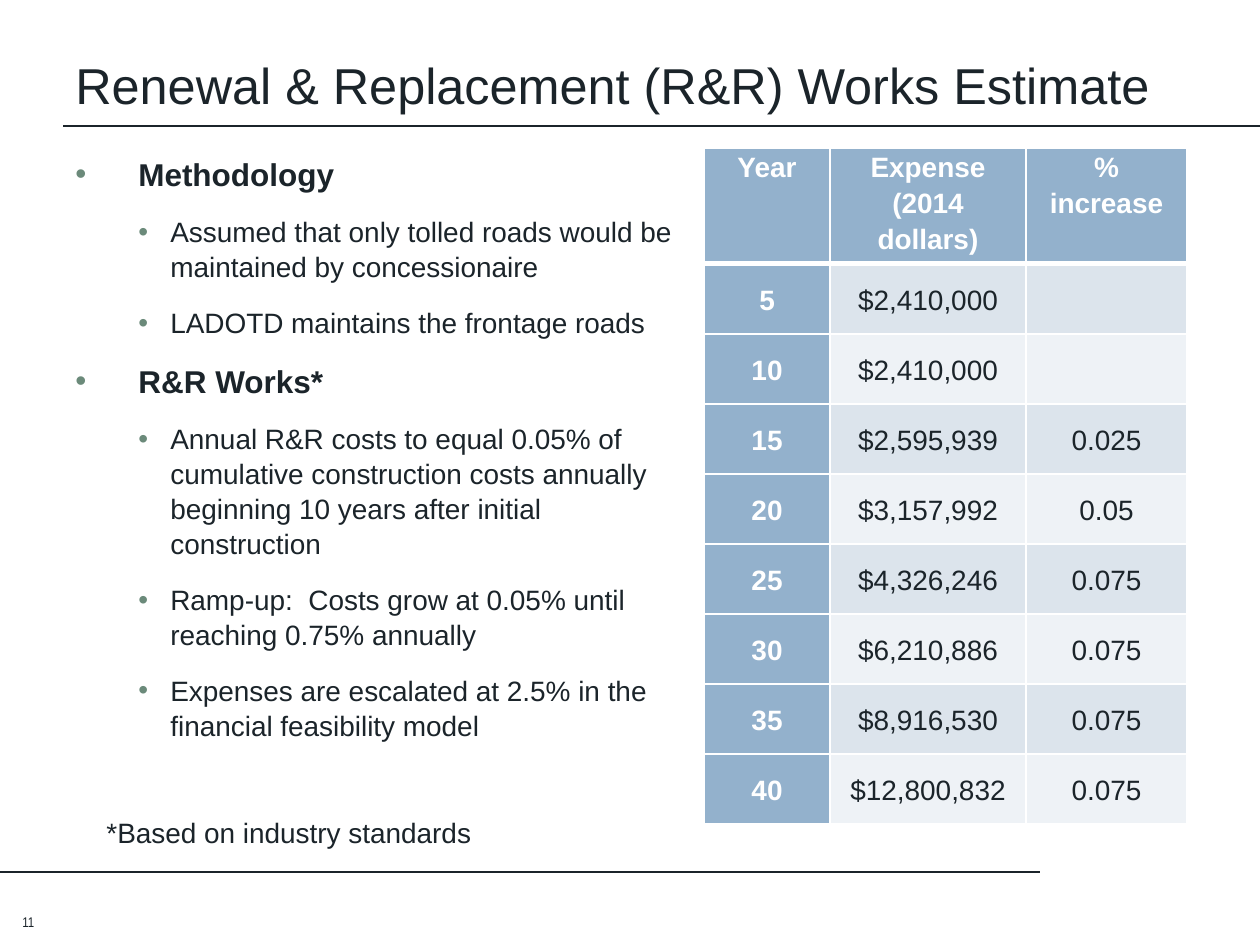
from lxml import etree
from pptx import Presentation, util as u
from pptx.dml.color import RGBColor
from pptx.enum import shapes, text
from pptx.oxml import ns

PX = 914400 / 126  # EMU per px

INK = RGBColor(0x1B, 0x24, 0x2A)
WHITE = RGBColor(0xFF, 0xFF, 0xFF)
BULLET = RGBColor(0x6B, 0x8A, 0x7A)
HEADER = RGBColor(0x93, 0xB1, 0xCC)
BAND_DARK = RGBColor(0xDC, 0xE4, 0xEC)
BAND_LIGHT = RGBColor(0xEE, 0xF2, 0xF6)

BULLETS = [
    (0, "Methodology"),
    (1, "Assumed that only tolled roads would be maintained by concessionaire"),
    (1, "LADOTD maintains the frontage roads"),
    (0, "R&R Works*"),
    (1, "Annual R&R costs to equal 0.05% of cumulative construction costs "
        "annually beginning 10 years after initial construction"),
    (1, "Ramp-up:  Costs grow at 0.05% until reaching 0.75% annually"),
    (1, "Expenses are escalated at 2.5% in the financial feasibility model"),
]
ROWS = [
    ("Year", "Expense (2014 dollars)", "% increase"),
    ("5", "$2,410,000", ""),
    ("10", "$2,410,000", ""),
    ("15", "$2,595,939", "0.025"),
    ("20", "$3,157,992", "0.05"),
    ("25", "$4,326,246", "0.075"),
    ("30", "$6,210,886", "0.075"),
    ("35", "$8,916,530", "0.075"),
    ("40", "$12,800,832", "0.075"),
]
COLUMN_WIDTHS = (126, 196, 161)
HEADER_HEIGHT, ROW_HEIGHT = 73, 70


def px(length):
    return u.Emu(round(length * PX))


def write(paragraph, content, size=16, font="Arial", color=INK, bold=False,
          align=None, spacing=None):
    paragraph.text = content
    paragraph.font.size = u.Pt(size)
    paragraph.font.name = font
    paragraph.font.bold = bold
    paragraph.font.color.rgb = color
    if align is not None:
        paragraph.alignment = align
    if spacing is not None:
        paragraph.line_spacing = spacing


def add_box(slide, left, top, width, height, anchor=text.MSO_ANCHOR.TOP):
    frame = slide.shapes.add_textbox(px(left), px(top), px(width), px(height)).text_frame
    frame.word_wrap = True
    frame.vertical_anchor = anchor
    return frame


def add_rule(slide, x1, x2, y):
    line = slide.shapes.add_connector(shapes.MSO_CONNECTOR.STRAIGHT,
                                      px(x1), px(y), px(x2), px(y))
    line.line.color.rgb = INK
    line.line.width = u.Pt(0.75)
    etree.SubElement(line._element.spPr, ns.qn("a:effectLst"))


def set_bullet(paragraph, margin, indent):
    properties = paragraph._p.get_or_add_pPr()
    properties.set("marL", str(px(margin)))
    properties.set("indent", str(px(indent)))
    color = etree.SubElement(properties, ns.qn("a:buClr"))
    etree.SubElement(color, ns.qn("a:srgbClr"), val=str(BULLET))
    etree.SubElement(properties, ns.qn("a:buFont"), typeface="Arial")
    etree.SubElement(properties, ns.qn("a:buChar"), char="•")


def add_bullets(frame):
    for index, (level, content) in enumerate(BULLETS):
        paragraph = frame.paragraphs[0] if index == 0 else frame.add_paragraph()
        paragraph.level = level
        if level == 0:
            set_bullet(paragraph, 63, -63)
            write(paragraph, content, size=18, bold=True, spacing=1.04)
        else:
            set_bullet(paragraph, 95, -32)
            write(paragraph, content, spacing=1.04)
        paragraph.space_before = u.Pt(6 if index else 0)
        paragraph.space_after = u.Pt(6)


def set_borders(cell, top=1, bottom=1):
    properties = cell._tc.get_or_add_tcPr()
    widths = {"lnL": 1, "lnR": 1, "lnT": top, "lnB": bottom}
    for position, (side, width) in enumerate(widths.items()):
        line = etree.Element(ns.qn("a:" + side), w=str(u.Pt(width)))
        fill = etree.SubElement(line, ns.qn("a:solidFill"))
        etree.SubElement(fill, ns.qn("a:srgbClr"), val=str(WHITE))
        properties.insert(position, line)


def format_cell(cell, content, row, column):
    heading = row == 0 or column == 0
    cell.margin_left = cell.margin_right = px(9)
    cell.margin_top = cell.margin_bottom = 0
    cell.vertical_anchor = text.MSO_ANCHOR.MIDDLE if row else text.MSO_ANCHOR.TOP
    cell.fill.solid()
    band = BAND_DARK if row % 2 else BAND_LIGHT
    cell.fill.fore_color.rgb = HEADER if heading else band
    set_borders(cell, top=3 if row == 1 else 1, bottom=1 if row else 3)
    write(cell.text_frame.paragraphs[0], content, bold=heading,
          color=WHITE if heading else INK,
          align=text.PP_ALIGN.CENTER, spacing=1.15)


def add_expense_table(slide, left, top):
    height = HEADER_HEIGHT + ROW_HEIGHT * (len(ROWS) - 1)
    table = slide.shapes.add_table(len(ROWS), len(COLUMN_WIDTHS), px(left), px(top),
                                   px(sum(COLUMN_WIDTHS)), px(height)).table
    for column, width in zip(table.columns, COLUMN_WIDTHS):
        column.width = px(width)
    for row, values in enumerate(ROWS):
        table.rows[row].height = px(ROW_HEIGHT if row else HEADER_HEIGHT)
        for column, content in enumerate(values):
            format_cell(table.cell(row, column), content, row, column)


def main():
    presentation = Presentation()
    presentation.slide_width, presentation.slide_height = px(1260), px(945)
    slide = presentation.slides.add_slide(presentation.slide_layouts[6])

    # Rules under the title and above the footer
    add_rule(slide, 1260, 63, 126)
    add_rule(slide, 1040, 0, 872)

    # Title
    title = add_box(slide, 63, 42, 1134, 116)
    title.margin_top = px(12)
    write(title.paragraphs[0], "Renewal & Replacement (R&R) Works Estimate", size=28.8)

    # Method on the left, expenses on the right
    add_bullets(add_box(slide, 63, 147, 640, 662))
    add_expense_table(slide, 704, 148)

    # Page number and footnote
    number = add_box(slide, 10, 872, 84, 65, anchor=text.MSO_ANCHOR.BOTTOM)
    write(number.paragraphs[0], "11", size=8, font="Arial Narrow")
    footnote = add_box(slide, 94, 809, 473, 47)
    write(footnote.paragraphs[0], "*Based on industry standards")

    presentation.save("out.pptx")


if __name__ == "__main__":
    main()
